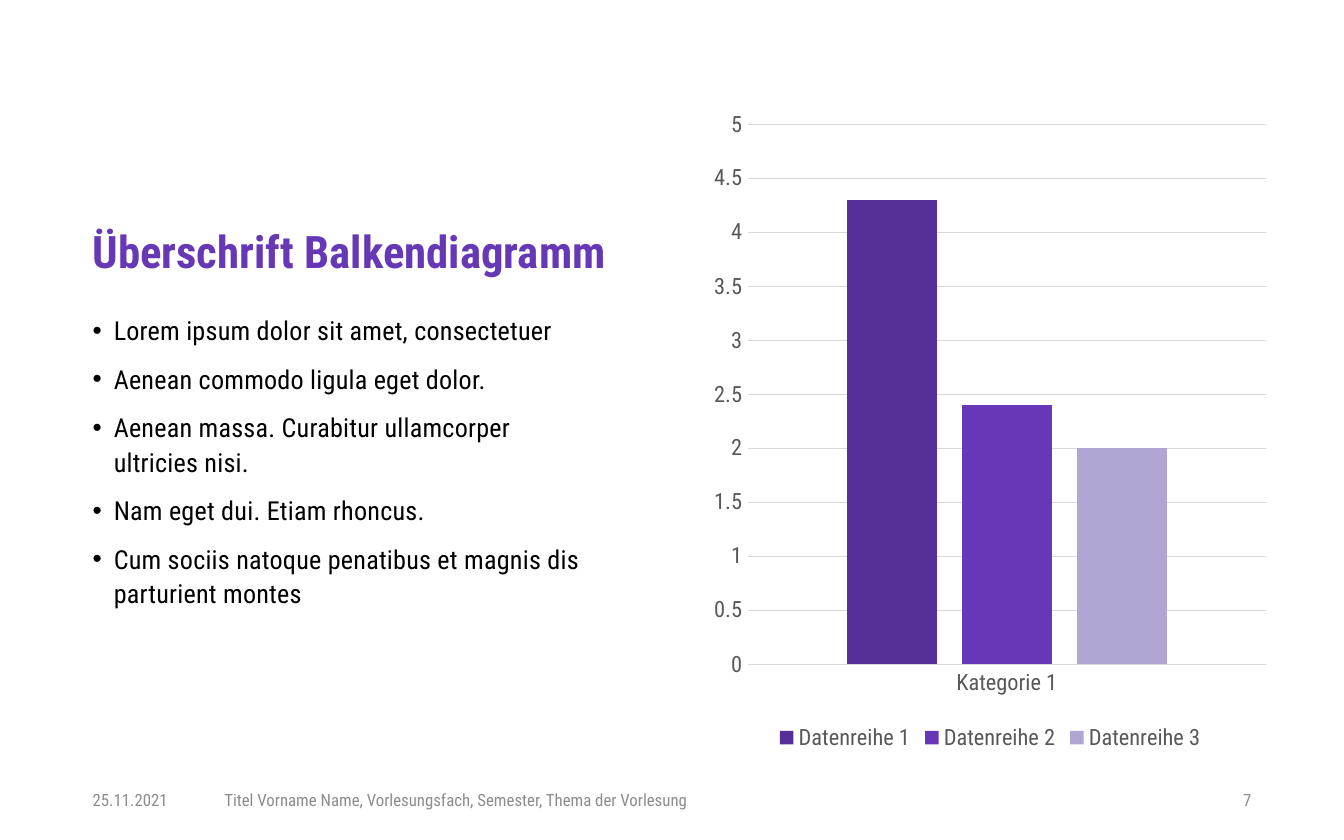
from lxml import etree
from pptx import Presentation
from pptx.chart.data import CategoryChartData
from pptx.dml.color import RGBColor
from pptx.enum.chart import XL_CHART_TYPE, XL_LEGEND_POSITION, XL_TICK_MARK
from pptx.enum.text import MSO_ANCHOR, MSO_AUTO_SIZE, PP_ALIGN
from pptx.oxml.ns import qn
from pptx.util import Cm, Pt

CLUSTERED = XL_CHART_TYPE.COLUMN_CLUSTERED
LEGEND_BOTTOM = XL_LEGEND_POSITION.BOTTOM
NO_TICK = XL_TICK_MARK.NONE
TOP, MIDDLE, BOTTOM = MSO_ANCHOR.TOP, MSO_ANCHOR.MIDDLE, MSO_ANCHOR.BOTTOM
NO_AUTOFIT = MSO_AUTO_SIZE.NONE
LEFT, RIGHT = PP_ALIGN.LEFT, PP_ALIGN.RIGHT

FONT = "Roboto Condensed"
TITLE_COLOR, TEXT_COLOR, FOOTER_COLOR = "6638B6", "000000", "8C8C8C"
AXIS_COLOR, GRID_COLOR = "595959", "D9D9D9"

MARGIN = 1.75
COLUMN_WIDTH = 10.39
FOOTER_TOP, FOOTER_HEIGHT = 14.71, 0.84

BULLETS = [
    "Lorem ipsum dolor sit amet, consectetuer",
    "Aenean commodo ligula eget dolor.",
    "Aenean massa. Curabitur ullamcorper \nultricies nisi.",
    "Nam eget dui. Etiam rhoncus.",
    "Cum sociis natoque penatibus et magnis dis parturient montes",
]
SERIES = [
    ("Datenreihe 1", 4.3, "552E97"),
    ("Datenreihe 2", 2.4, "6637B6"),
    ("Datenreihe 3", 2, "B0A5D3"),
]
FOOTERS = [
    (MARGIN, 1.83, "25.11.2021", LEFT),
    (4.24, 16.92, "Titel Vorname Name, Vorlesungsfach, Semester, Thema der Vorlesung", LEFT),
    (21.82, 1.83, "7", RIGHT),
]


def rgb(value):
    return RGBColor.from_string(value)


def set_font(font, size, color, bold=False):
    font.name = FONT
    font.size = Pt(size)
    font.bold = bold
    font.color.rgb = rgb(color)


def place(box, left, top, width, height):
    box.left, box.top = Cm(left), Cm(top)
    box.width, box.height = Cm(width), Cm(height)


def prepare_frame(box, anchor):
    """Give the box a wrapping text frame without margins or autofit."""
    frame = box.text_frame
    frame.margin_left = frame.margin_right = 0
    frame.margin_top = frame.margin_bottom = 0
    frame.word_wrap = True
    frame.auto_size = NO_AUTOFIT
    frame.vertical_anchor = anchor
    return frame


def add_bullet(para):
    properties = para._p.get_or_add_pPr()
    properties.set("marL", str(Cm(0.4)))
    properties.set("indent", str(-Cm(0.4)))
    etree.SubElement(properties, qn("a:buFont")).set("typeface", "Arial")
    etree.SubElement(properties, qn("a:buChar")).set("char", "•")


def fill_title(box):
    place(box, MARGIN, 1.57, COLUMN_WIDTH, 3.68)
    para = prepare_frame(box, BOTTOM).paragraphs[0]
    para.text = "Überschrift Balkendiagramm"
    para.alignment = LEFT
    para.line_spacing = 0.9
    set_font(para.font, 24, TITLE_COLOR, bold=True)


def fill_bullets(box):
    place(box, MARGIN, 5.89, COLUMN_WIDTH, 8.41)
    frame = prepare_frame(box, TOP)
    for index, text in enumerate(BULLETS):
        para = frame.paragraphs[0] if index == 0 else frame.add_paragraph()
        para.text = text
        para.line_spacing = 1.1
        para.space_before = Pt(7.5 if index else 0)
        add_bullet(para)
        set_font(para.font, 14, TEXT_COLOR)
        for span in para.runs:
            span._r.get_or_add_rPr().set("spc", "10")


def add_footer(page, left, width, text, alignment):
    box = page.shapes.add_textbox(
        Cm(left), Cm(FOOTER_TOP), Cm(width), Cm(FOOTER_HEIGHT))
    para = prepare_frame(box, MIDDLE).paragraphs[0]
    para.text = text
    para.alignment = alignment
    set_font(para.font, 9, FOOTER_COLOR)


def style_axes(chart):
    category_axis, value_axis = chart.category_axis, chart.value_axis
    for axis in (category_axis, value_axis):
        axis.major_tick_mark = axis.minor_tick_mark = NO_TICK
        set_font(axis.tick_labels.font, 12, AXIS_COLOR)
    value_axis.minimum_scale, value_axis.maximum_scale = 0, 5
    value_axis.major_unit = 0.5
    value_axis.format.line.fill.background()
    for line in (category_axis.format.line, value_axis.major_gridlines.format.line):
        line.color.rgb = rgb(GRID_COLOR)
        line.width = Pt(0.75)


def add_column_chart(page):
    data = CategoryChartData()
    data.categories = ["Kategorie 1"]
    for name, value, _ in SERIES:
        data.add_series(name, [value])
    chart = page.shapes.add_chart(
        CLUSTERED, Cm(13.28), Cm(1.85), Cm(10.87), Cm(12.45), data).chart
    set_font(chart.font, 12, AXIS_COLOR)
    chart.has_title = False
    chart.has_legend = True
    chart.legend.position = LEGEND_BOTTOM
    chart.legend.include_in_layout = False
    set_font(chart.legend.font, 12, AXIS_COLOR)
    style_axes(chart)

    plot = chart.plots[0]
    plot.vary_by_categories = False
    plot.gap_width, plot.overlap = 219, -27
    for series, (_, _, color) in zip(plot.series, SERIES):
        series.format.fill.solid()
        series.format.fill.fore_color.rgb = rgb(color)


def main():
    deck = Presentation()
    deck.slide_width, deck.slide_height = Cm(25.4), Cm(15.88)
    page = deck.slides.add_slide(deck.slide_layouts[1])
    fill_title(page.shapes.title)
    fill_bullets(page.placeholders[1])
    add_column_chart(page)
    for footer in FOOTERS:
        add_footer(page, *footer)
    deck.save("out.pptx")


if __name__ == "__main__":
    main()
